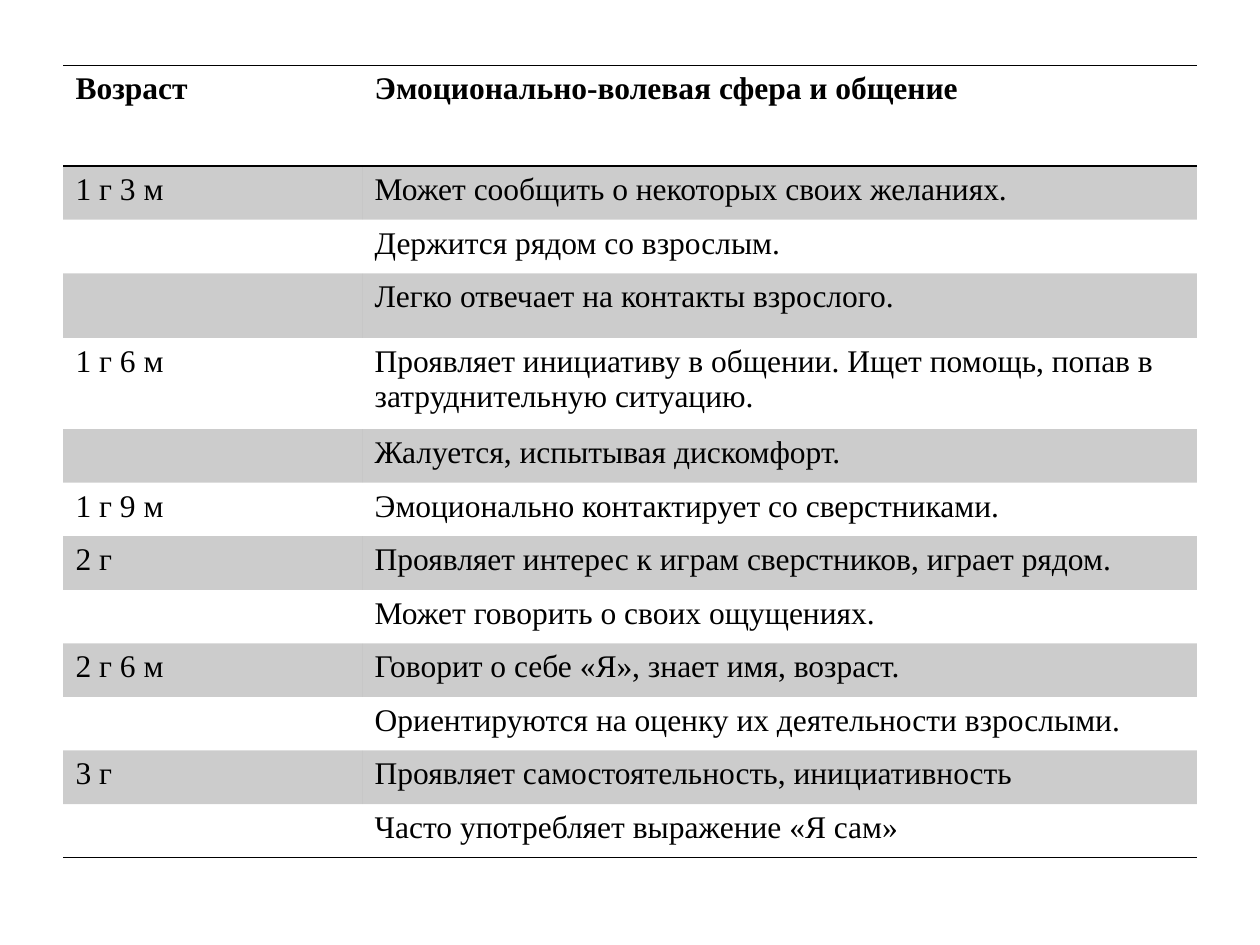
from typing import NamedTuple

from lxml.etree import SubElement
from pptx import Presentation
from pptx.dml.color import RGBColor
from pptx.oxml.ns import qn
from pptx.table import Table, _Cell
from pptx.util import Cm, Pt

COLORS = {"ink": "000000", "band": "000000"}
BAND_OPACITY = 20  # percent
PLAIN_STYLE = "{2D5ABB26-0587-4C30-8999-92F81FD0307C}"
TEXT_FORMAT = {"name": "Times New Roman", "size": Pt(18)}
COLUMN_WIDTHS = (6.03, 16.83)
ROW_HEIGHT = 1.08


class Milestone(NamedTuple):
    age: str
    behaviour: str
    height: float = ROW_HEIGHT


HEADER = Milestone("Возраст", "Эмоционально-волевая сфера и общение", 2.03)
MILESTONES = [
    Milestone("1 г 3 м", "Может сообщить о некоторых своих желаниях."),
    Milestone("", "Держится рядом со взрослым."),
    Milestone("", "Легко отвечает на контакты взрослого.", 1.3),
    Milestone("1 г 6 м", "Проявляет инициативу в общении. "
              "Ищет помощь, попав в затруднительную ситуацию.", 1.84),
    Milestone("", "Жалуется, испытывая дискомфорт."),
    Milestone("1 г 9 м", "Эмоционально контактирует со сверстниками."),
    Milestone("2 г", "Проявляет интерес к играм сверстников, играет рядом."),
    Milestone("", "Может говорить о своих ощущениях."),
    Milestone("2 г 6 м", "Говорит о себе «Я», знает имя, возраст."),
    Milestone("", "Ориентируются на оценку их деятельности взрослыми."),
    Milestone("3 г", "Проявляет самостоятельность, инициативность"),
    Milestone("", "Часто употребляет выражение «Я сам»"),
]


def add_border(cell: _Cell, side: str) -> None:
    """Rule one side of a cell: T for top, B for bottom."""
    line = SubElement(cell._tc.get_or_add_tcPr(), qn(f"a:ln{side}"), w=str(Pt(1)))
    fill = SubElement(line, qn("a:solidFill"))
    SubElement(fill, qn("a:srgbClr"), val=COLORS["ink"])


def fill_band(cell: _Cell) -> None:
    cell.fill.solid()
    cell.fill.fore_color.rgb = RGBColor.from_string(COLORS["band"])
    color = cell._tc.tcPr.find(qn("a:solidFill")).find(qn("a:srgbClr"))
    SubElement(color, qn("a:alpha"), val=str(BAND_OPACITY * 1000))


def write_text(cell: _Cell, text: str, bold: bool) -> None:
    cell.text = text
    font = cell.text_frame.paragraphs[0].font
    runs = cell.text_frame.paragraphs[0].runs
    for target in [font, *(run.font for run in runs)]:
        for attribute, value in {**TEXT_FORMAT, "bold": bold}.items():
            setattr(target, attribute, value)
        target.color.rgb = RGBColor.from_string(COLORS["ink"])


def draw_row(table: Table, index: int, milestone: Milestone, sides: str) -> None:
    table.rows[index].height = Cm(milestone.height)
    for cell, text in zip(table.rows[index].cells, (milestone.age, milestone.behaviour)):
        write_text(cell, text, bold=index == 0)
        for side in sides:
            add_border(cell, side)
        if index % 2:
            fill_band(cell)
        else:
            cell.fill.background()


def main() -> None:
    prs = Presentation()
    prs.slide_width, prs.slide_height = Cm(25.4), Cm(19.05)
    slide = prs.slides.add_slide(prs.slide_layouts[6])

    # Table of milestones by age
    rows = [HEADER, *MILESTONES]
    table = slide.shapes.add_table(
        len(rows), len(COLUMN_WIDTHS), Cm(1.27), Cm(1.32),
        Cm(sum(COLUMN_WIDTHS)), Cm(sum(row.height for row in rows)),
    ).table
    table._tbl.tblPr.find(qn("a:tableStyleId")).text = PLAIN_STYLE
    for column, width in zip(table.columns, COLUMN_WIDTHS):
        column.width = Cm(width)

    # Rules frame the header and close the last row
    rules = {0: "TB", len(rows) - 1: "B"}
    for index, milestone in enumerate(rows):
        draw_row(table, index, milestone, rules.get(index, ""))

    prs.save("out.pptx")


if __name__ == "__main__":
    main()
